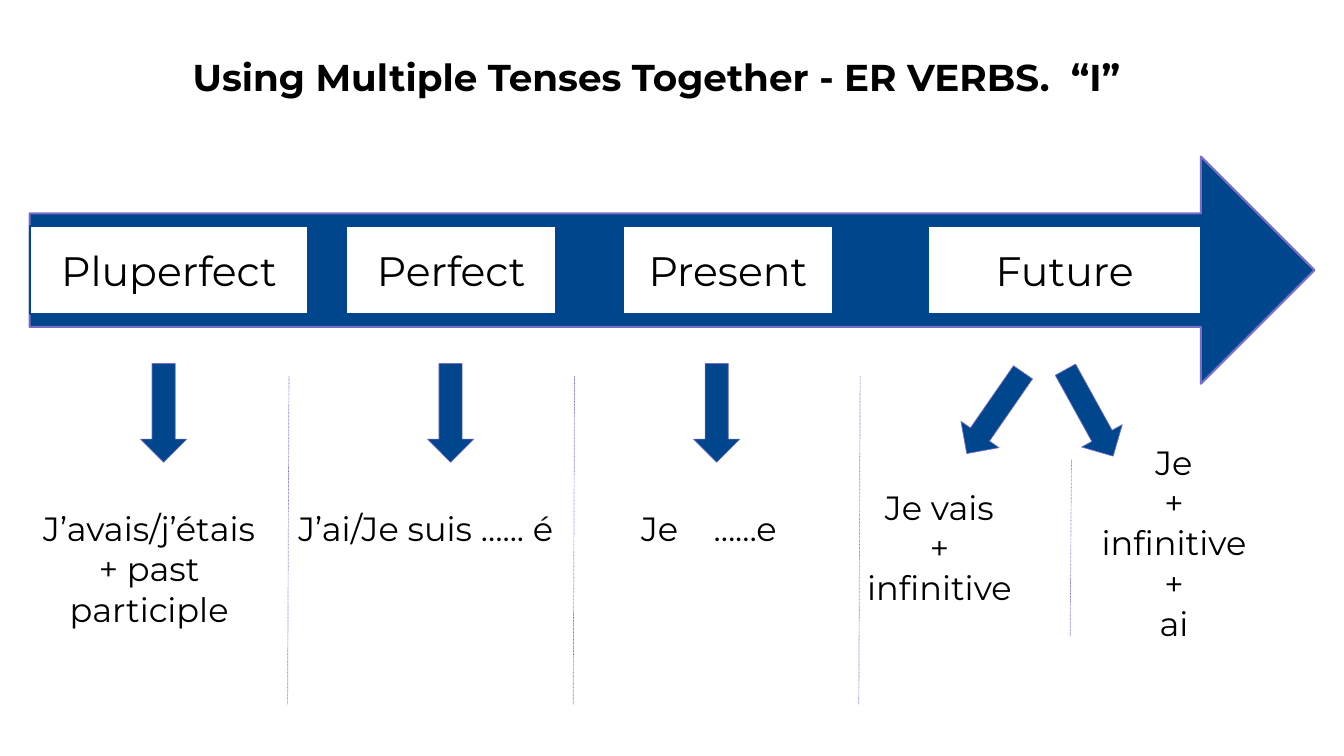
from collections import namedtuple

from lxml.etree import SubElement
from pptx import Presentation
from pptx.dml.color import RGBColor
from pptx.enum.dml import MSO_LINE
from pptx.enum.shapes import MSO_CONNECTOR, MSO_SHAPE
from pptx.enum.text import MSO_ANCHOR, MSO_AUTO_SIZE, PP_ALIGN
from pptx.oxml.ns import qn
from pptx.util import Inches, Pt

# The page is a grid of 20 columns by 11.25 rows, one inch each.
COLUMNS, ROWS, UNIT = 20, 11.25, Inches(1)
BLUE, VIOLET, WHITE, BLACK = "00468C", "786EC8", "FFFFFF", "000000"
FONT = "Montserrat"
GAP = "\t"  # marks a widened space inside a line
GAP_SPACING = "2840"  # hundredths of a point added to that space

TENSE_PITCH = 4.25
FIRST_TENSE = 0.05
TENSE_TOP, TENSE_HEIGHT = 5.4, 5.08

Box = namedtuple("Box", "left top width height")
Divider = namedtuple("Divider", "top height")
FULL_DIVIDER, HALF_DIVIDER = Divider(0.2, 4.88), Divider(1.44, 2.64)

# label, left within the timeline, width
LABELS = [
    ("Perfect", 4.71, 3.13),
    ("Present", 8.83, 3.13),
    ("Future", 13.37, 4.07),
    ("Pluperfect", 0, 4.15),
]

# grid position and width in tenses, arrow left and turn,
# pattern box within the column, pattern lines, divider on the right
TENSES = [
    (0, 1, 2.04, 0, Box(0.39, 1.96, 3.56, 2.01),
     ["J’avais/j’étais + past participle"], FULL_DIVIDER),
    (1, 1, 2.06, 0, Box(-0.32, 1.96, 4.71, 1.01),
     ["J’ai/Je suis …... é"], FULL_DIVIDER),
    (2, 1, 1.77, 0, Box(0.22, 1.96, 3.56, 2.01),
     [f"Je{GAP}……e"], FULL_DIVIDER),
    (3, 0.74, 1.66, 34.7, Box(-0.6, 1.64, 3.56, 2.01),
     ["Je vais", "+", "infinitive"], HALF_DIVIDER),
    (3.74, 0.95, -0.08, 331.1, Box(-0.44, 0.97, 3.93, 2.01),
     ["Je", "+", "infinitive", "+", "ai"], None),
]


def colour(hex_string):
    return RGBColor.from_string(hex_string)


def units(*lengths):
    return [round(length * UNIT) for length in lengths]


def inside(box, left, top, width, height):
    """Turn a place within a box into a place on the page."""
    return Box(box.left + left, box.top + top, width, height)


def write(shape, lines, size, inset, anchor, bold=False):
    frame = shape.text_frame
    margin = round(inset * UNIT)
    frame_format = {
        "word_wrap": True, "auto_size": MSO_AUTO_SIZE.NONE,
        "vertical_anchor": anchor, "margin_left": margin,
        "margin_right": margin, "margin_top": margin, "margin_bottom": margin,
    }
    for name, value in frame_format.items():
        setattr(frame, name, value)
    font_format = {"name": FONT, "size": Pt(size), "bold": bold}
    for index, line in enumerate(lines):
        para = frame.add_paragraph() if index else frame.paragraphs[0]
        para.alignment = PP_ALIGN.CENTER
        head, gap, tail = line.partition(GAP)
        for text in filter(None, [head, " " if gap else "", tail]):
            span = para.add_run()
            span.text = text
            for name, value in font_format.items():
                setattr(span.font, name, value)
            span.font.color.rgb = colour(BLACK)
            if text == " ":
                span.font._element.set("spc", GAP_SPACING)


def add_block(page, kind, box, fill, line, line_width):
    block = page.shapes.add_shape(kind, *units(*box))
    block.shadow.inherit = False
    block.fill.solid()
    block.fill.fore_color.rgb = colour(fill)
    block.line.color.rgb = colour(line)
    block.line.width = Pt(line_width)
    return block


def add_title(page, box, text):
    title = page.shapes.title
    title.left, title.top, title.width, title.height = units(*box)
    write(title, [text], 40, 0.2, MSO_ANCHOR.TOP, bold=True)


def add_timeline(page, box):
    add_block(page, MSO_SHAPE.RIGHT_ARROW, box, BLUE, VIOLET, 2.25)
    for text, left, width in LABELS:
        place = inside(box, left, 1.04, width, 1.3)
        label = add_block(page, MSO_SHAPE.RECTANGLE, place, WHITE, BLUE, 2.25)
        write(label, [text], 44, 0.1, MSO_ANCHOR.MIDDLE)


def add_divider(page, box, divider):
    """Draw the slightly slanted dotted line on the right edge of a column."""
    right, top = box.left + box.width, box.top + divider.top
    ends = units(right, top, right - 0.02, top + divider.height)
    rule = page.shapes.add_connector(MSO_CONNECTOR.STRAIGHT, *ends)
    rule.line.color.rgb = colour(VIOLET)
    rule.line.width = Pt(0.75)
    rule.line.dash_style = MSO_LINE.ROUND_DOT
    SubElement(rule._element.spPr, qn("a:effectLst"))


def add_tense(page, box, arrow_left, turn, pattern_box, lines, divider):
    place = inside(box, arrow_left, 0.01, 0.69, 1.47)
    arrow = add_block(page, MSO_SHAPE.DOWN_ARROW, place, BLUE, VIOLET, 0.75)
    arrow.rotation = turn
    pattern = page.shapes.add_textbox(*units(*inside(box, *pattern_box)))
    write(pattern, lines, 36, 0.2, MSO_ANCHOR.TOP)
    if divider:
        add_divider(page, box, divider)


def main():
    deck = Presentation()
    deck.slide_width, deck.slide_height = units(COLUMNS, ROWS)
    page = deck.slides.add_slide(deck.slide_layouts[5])
    add_title(page, Box(2.18, 0.61, 15.18, 1.22),
              "Using Multiple Tenses Together - ER VERBS.  “I”")
    add_timeline(page, Box(0.44, 2.33, 19.12, 3.38))
    for position, share, *parts in TENSES:
        box = Box(FIRST_TENSE + position * TENSE_PITCH, TENSE_TOP,
                  share * TENSE_PITCH, TENSE_HEIGHT)
        add_tense(page, box, *parts)
    deck.save("out.pptx")


if __name__ == "__main__":
    main()
